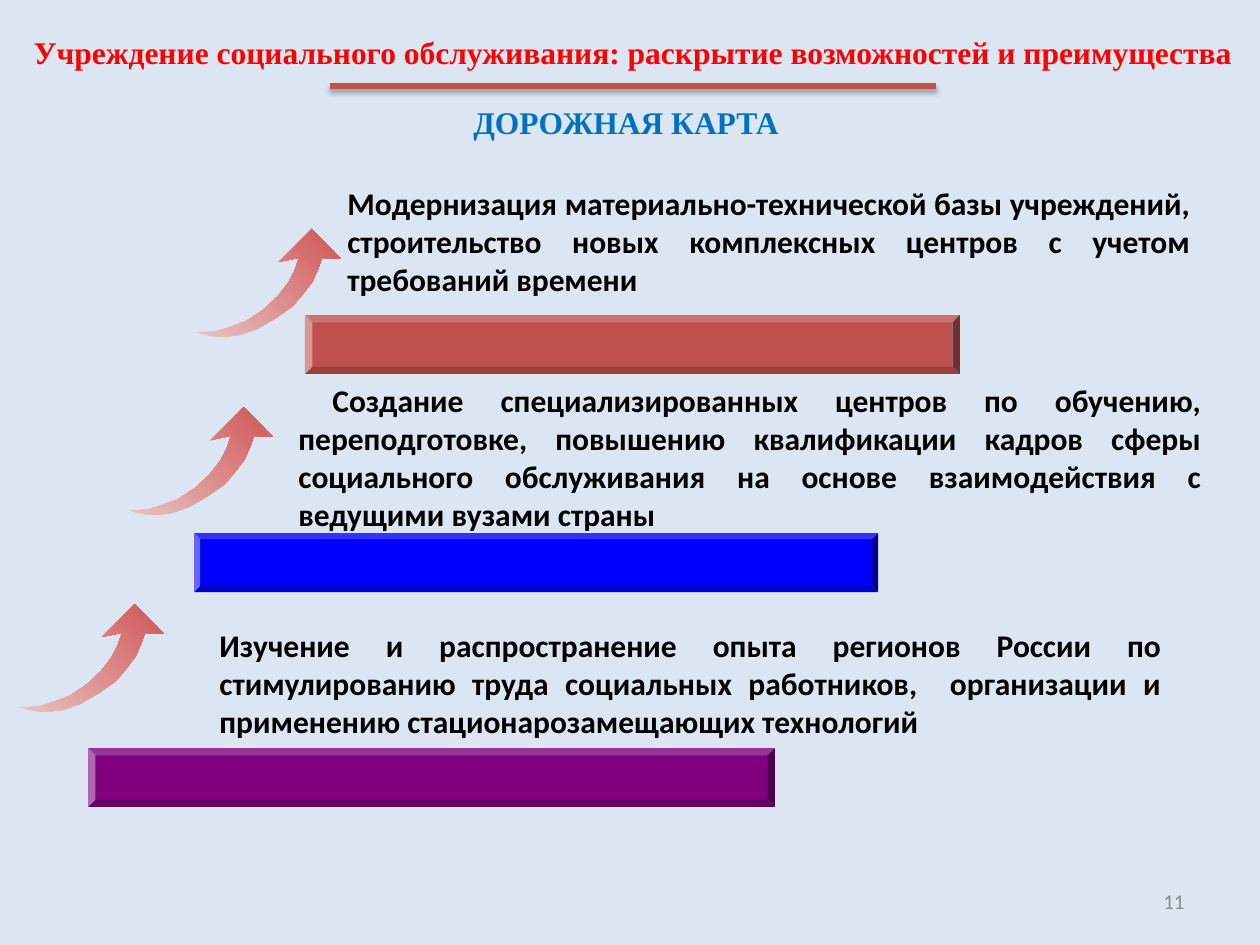
from lxml.etree import SubElement
from pptx import Presentation
from pptx.dml.color import RGBColor
from pptx.enum.shapes import MSO_CONNECTOR, MSO_SHAPE
from pptx.enum.text import MSO_ANCHOR as Anchor, MSO_AUTO_SIZE, PP_ALIGN as Align
from pptx.oxml.ns import qn
from pptx.util import Pt

PX = 914400 / 126

BACKGROUND = RGBColor(0xDC, 0xE6, 0xF2)
RED = RGBColor(0xFF, 0x00, 0x00)
BLUE = RGBColor(0x00, 0x70, 0xC0)
BLACK = RGBColor(0x00, 0x00, 0x00)
GRAY = RGBColor(0x8C, 0x8C, 0x8C)
BRICK = RGBColor(0xC0, 0x50, 0x4D)
BRIGHT_BLUE = RGBColor(0x00, 0x00, 0xFF)
PURPLE = RGBColor(0x80, 0x00, 0x80)
ARROW_TAIL = RGBColor(0xE9, 0xC2, 0xC2)
ARROW_HEAD = RGBColor(0xD0, 0x56, 0x56)

TITLE = "Учреждение социального обслуживания: раскрытие возможностей и преимущества"
SUBTITLE = "ДОРОЖНАЯ КАРТА"
PAGE_NUMBER = "11"

STEPS = [
    {"text": "Модернизация материально-технической базы учреждений, строительство "
             "новых комплексных центров с учетом требований времени",
     "text_box": (335, 178, 868, 127), "indent": 0,
     "bar": (305, 315, 655, 59), "bevel": 0.126, "color": BRICK,
     "arrow": (197, 229)},
    {"text": "Создание специализированных центров по обучению, переподготовке, "
             "повышению квалификации кадров сферы социального обслуживания "
             "на основе взаимодействия с ведущими вузами страны",
     "text_box": (286, 375, 928, 165), "indent": 34,
     "bar": (194, 533, 684, 59), "bevel": 0.104, "color": BRIGHT_BLUE,
     "arrow": (129, 407)},
    {"text": "Изучение и распространение опыта регионов России по стимулированию "
             "труда социальных работников,  организации и применению "
             "стационарозамещающих технологий",
     "text_box": (207, 620, 967, 127), "indent": 0,
     "bar": (88, 748, 687, 59), "bevel": 0.126, "color": PURPLE,
     "arrow": (20, 604)},
]

ARROW_OUTLINE = [
    (0, 103), (9, 103), (20, 102), (33, 98), (49, 92), (66, 81), (81, 67),
    (91, 54), (97, 43), (102, 29), (82, 33), (115, 0), (144, 30), (125, 29),
    (122, 38), (116, 52), (107, 64), (96, 77), (79, 89), (60, 100), (43, 106),
    (26, 108), (14, 107), (5, 105),
]


def emu(*lengths):
    return [round(length * PX) for length in lengths]


def write(shape, text, font_name, size, color, bold=True, align=Align.CENTER,
          anchor=Anchor.TOP, wrap=True):
    frame = shape.text_frame
    frame.text = text
    frame.word_wrap = wrap
    frame.auto_size = MSO_AUTO_SIZE.NONE
    frame.vertical_anchor = anchor
    paragraph = frame.paragraphs[0]
    paragraph.alignment = align
    font = paragraph.font
    font.name, font.size, font.bold = font_name, Pt(size), bold
    font.color.rgb = color
    return paragraph


def add_rule(slide):
    rule = slide.shapes.add_connector(MSO_CONNECTOR.STRAIGHT, *emu(330, 86, 936, 86))
    rule.line.color.rgb = BRICK
    rule.line.width = Pt(3)
    effects = SubElement(rule._element.spPr, qn("a:effectLst"))
    shadow = SubElement(effects, qn("a:outerShdw"), blurRad=str(Pt(3.1)),
                        dist=str(Pt(1.8)), dir="5400000", rotWithShape="0")
    color = SubElement(shadow, qn("a:srgbClr"), val=str(BLACK))
    SubElement(color, qn("a:alpha"), val="35000")


def add_bar(slide, box, bevel, color):
    bar = slide.shapes.add_shape(MSO_SHAPE.BEVEL, *emu(*box))
    bar.adjustments[0] = bevel
    bar.shadow.inherit = False
    bar.fill.solid()
    bar.fill.fore_color.rgb = color
    bar.line.fill.background()


def add_arrow(slide, left, top):
    points = [(left + x, top + y) for x, y in ARROW_OUTLINE]
    builder = slide.shapes.build_freeform(*points[0], scale=PX)
    builder.add_line_segments(points[1:], close=True)
    arrow = builder.convert_to_shape()
    arrow.shadow.inherit = False
    arrow.line.fill.background()
    arrow.fill.gradient()
    arrow.fill.gradient_angle = 45
    tail, head = arrow.fill.gradient_stops
    tail.position, head.position = 0, 1
    tail.color.rgb, head.color.rgb = ARROW_TAIL, ARROW_HEAD


def main():
    presentation = Presentation()
    presentation.slide_width, presentation.slide_height = emu(1260, 945)
    slide = presentation.slides.add_slide(presentation.slide_layouts[5])
    slide.background.fill.solid()
    slide.background.fill.fore_color.rgb = BACKGROUND

    title = slide.shapes.title
    title.left, title.top, title.width, title.height = emu(15, 27, 1236, 50)
    write(title, TITLE, "Times New Roman", 18, RED, wrap=False)
    add_rule(slide)
    subtitle = slide.shapes.add_textbox(*emu(459, 97, 334, 50))
    write(subtitle, SUBTITLE, "Times New Roman", 18, BLUE, wrap=False)

    for step in STEPS:
        add_bar(slide, step["bar"], step["bevel"], step["color"])
        add_arrow(slide, *step["arrow"])
        text_box = slide.shapes.add_textbox(*emu(*step["text_box"]))
        paragraph = write(text_box, step["text"], "Calibri", 18, BLACK,
                          align=Align.JUSTIFY)
        paragraph._p.get_or_add_pPr().set("indent", str(emu(step["indent"])[0]))

    number = slide.shapes.add_textbox(*emu(903, 876, 294, 50))
    write(number, PAGE_NUMBER, "Calibri", 12, GRAY, bold=False,
          align=Align.RIGHT, anchor=Anchor.MIDDLE)
    presentation.save("out.pptx")


if __name__ == "__main__":
    main()
